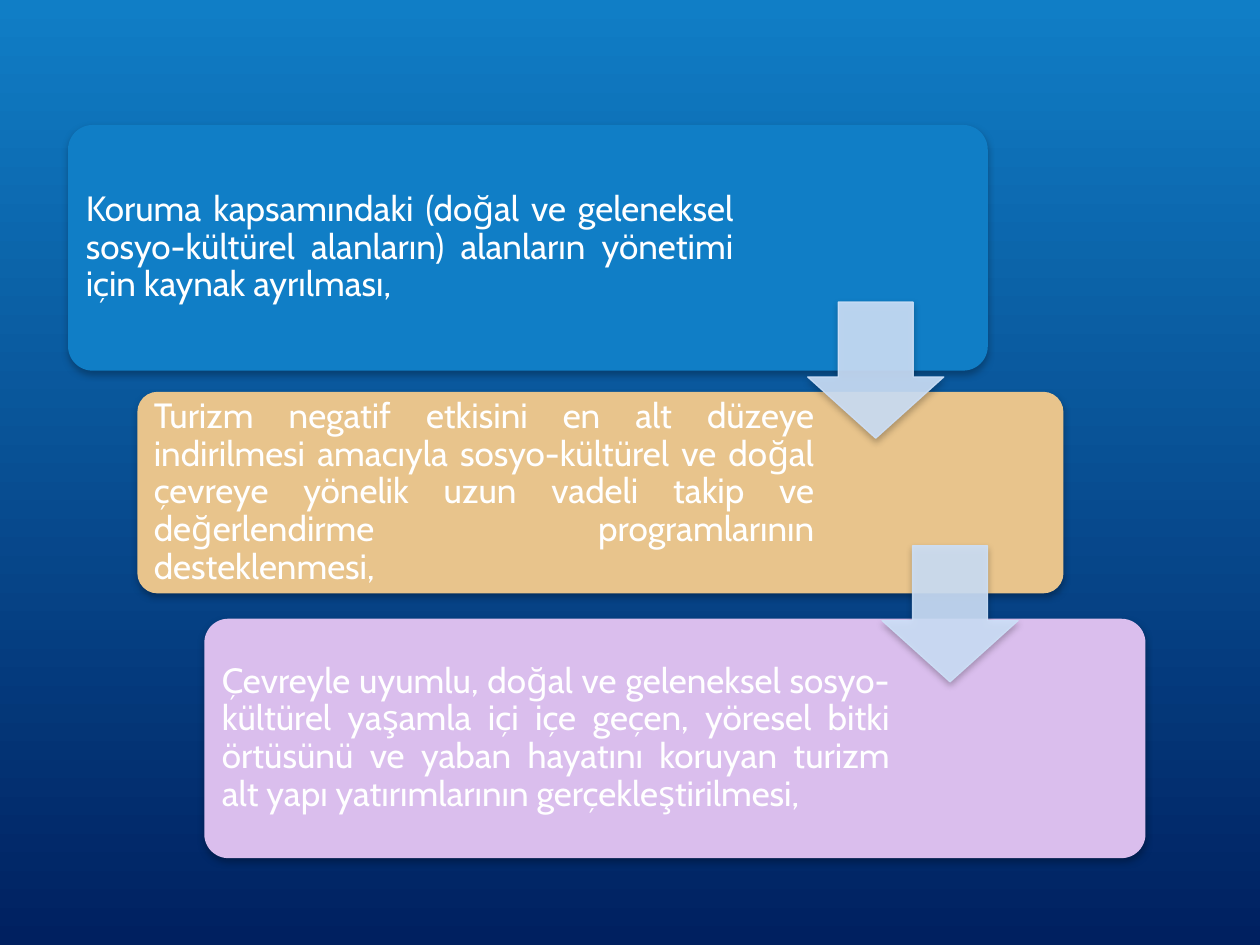
from lxml import etree
from pptx import Presentation
from pptx.dml.color import RGBColor
from pptx.enum.shapes import MSO_SHAPE
from pptx.enum.text import MSO_ANCHOR, PP_ALIGN
from pptx.oxml.ns import qn
from pptx.util import Pt

ROUND = MSO_SHAPE.ROUNDED_RECTANGLE
DOWN = MSO_SHAPE.DOWN_ARROW
MIDDLE = MSO_ANCHOR.MIDDLE
JUSTIFY = PP_ALIGN.JUSTIFY
PALE = "CDE0F8"
RIM = 0.0293

STEPS = [
    (38.9, 71.4, 525.6, 140.4, 382.3, "107EC6",
     "Koruma kapsamındaki (doğal ve geleneksel sosyo-kültürel alanların) "
     "alanların yönetimi için kaynak ayrılması,"),
    (78.5, 223.9, 529.2, 115.2, 389.5, "E8C48C",
     "Turizm negatif etkisini en alt düzeye indirilmesi amacıyla "
     "sosyo-kültürel ve doğal çevreye yönelik uzun vadeli takip ve "
     "değerlendirme programlarının desteklenmesi,"),
    (116.8, 353.6, 537.8, 136.8, 393.8, "DABEED",
     "Çevreyle uyumlu, doğal ve geleneksel sosyo-kültürel yaşamla içi içe "
     "geçen, yöresel bitki örtüsünü ve yaban hayatını koruyan turizm alt "
     "yapı yatırımlarının gerçekleştirilmesi,"),
]
ARROWS = [(461.5, 172.6), (504, 311.8)]


def paint(color, code):
    color.rgb = RGBColor.from_string(code)


def fade(node, share):
    etree.SubElement(node, qn("a:alpha"), val=str(share * 1000))


def shade(shape):
    shape.shadow.inherit = False
    effects = shape._element.spPr.find(qn("a:effectLst"))
    outer = etree.SubElement(
        effects, qn("a:outerShdw"), blurRad=str(Pt(4)), dist=str(Pt(2)),
        dir="5400000", rotWithShape="0")
    color = etree.SubElement(outer, qn("a:srgbClr"), val="000000")
    fade(color, 28)


def add_form(shapes, kind, left, top, width, height, code):
    form = shapes.add_shape(kind, Pt(left), Pt(top), Pt(width), Pt(height))
    form.fill.solid()
    paint(form.fill.fore_color, code)
    form.line.fill.background()
    shade(form)
    return form


def add_text(shapes, left, top, width, height, words):
    box = shapes.add_textbox(Pt(left), Pt(top), Pt(width), Pt(height))
    frame = box.text_frame
    frame.word_wrap = True
    frame.vertical_anchor = MIDDLE
    frame.margin_left = frame.margin_right = Pt(6)
    frame.margin_top = frame.margin_bottom = Pt(6)
    para = frame.paragraphs[0]
    para.text = words
    para.alignment = JUSTIFY
    para.line_spacing = 0.9
    para.space_after = Pt(7)
    para.font.size = Pt(20)
    para.font.name = "Cabin"
    paint(para.font.color, "FFFFFF")


def add_step(shapes, left, top, width, height, span, code, words):
    card = add_form(shapes, ROUND, left, top, width, height, code)
    card.adjustments[0] = 0.1
    rim = RIM * height
    add_text(shapes, left + rim, top + rim, span, height - 2 * rim, words)


def add_arrow(shapes, left, top):
    arrow = add_form(shapes, DOWN, left, top, 77.8, 77.8, PALE)
    arrow.adjustments[0] = 0.45
    arrow.adjustments[1] = 0.45
    arrow.adjustments[0] = 0.55
    arrow.line.width = Pt(0.75)
    arrow.line.fill.solid()
    paint(arrow.line.color, PALE)
    for node in arrow._element.spPr.iterfind(".//" + qn("a:solidFill")):
        fade(node[0], 90)


def set_back(slide):
    fill = slide.background.fill
    fill.gradient()
    fill.gradient_angle = 270
    for stop, code in zip(fill.gradient_stops, ("107EC6", "002060")):
        paint(stop.color, code)


def main():
    deck = Presentation()
    deck.slide_width, deck.slide_height = Pt(720), Pt(540)
    slide = deck.slides.add_slide(deck.slide_layouts[6])
    set_back(slide)
    shapes = slide.shapes.add_group_shape().shapes
    for step in STEPS:
        add_step(shapes, *step)
    for spot in ARROWS:
        add_arrow(shapes, *spot)
    deck.save("out.pptx")


if __name__ == "__main__":
    main()
